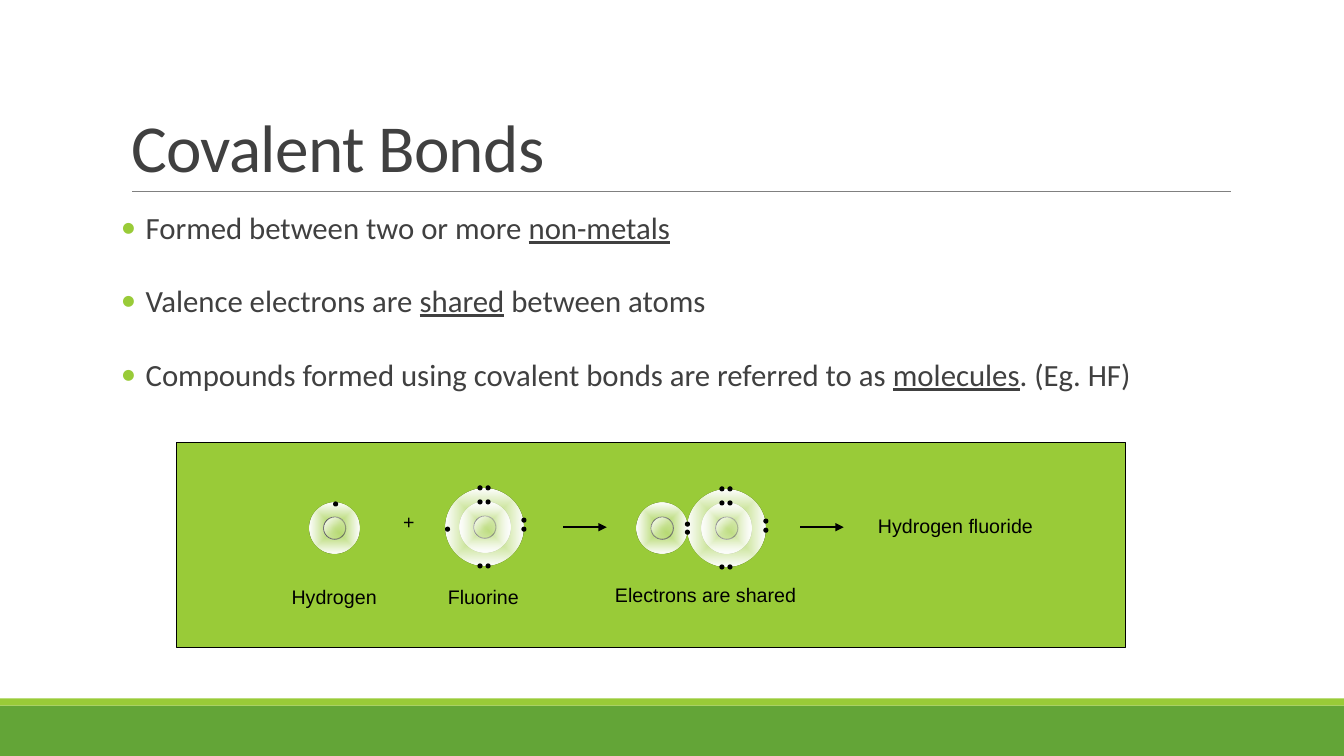
from pptx import Presentation
from pptx.dml.color import RGBColor as Rgb
from pptx.enum.shapes import MSO_CONNECTOR as Conn, MSO_SHAPE as Geo
from pptx.enum.text import MSO_ANCHOR as Anchor, MSO_AUTO_SIZE as Fit, PP_ALIGN as Align
from pptx.oxml import parse_xml
from pptx.oxml.ns import nsdecls, qn
from pptx.util import Inches, Pt

HUES = {"lime": "99CB38", "green": "63A537", "ink": "404040",
        "grey": "808080", "black": "000000", "white": "FFFFFF"}
COLS, ROWS = 133.33, 75  # grid of tenth-inch cells
BOND = [  # bullet parts; the middle part is underlined
    ("Formed between two or more ", "non-metals", ""),
    ("Valence electrons are ", "shared", " between atoms"),
    ("Compounds formed using covalent bonds are referred to as ",
     "molecules", ". (Eg. HF)"),
]
# Electron places, measured from the middle of an atom
PAIRS = [(x, y) for y in (-3.9, -2.5, 3.85) for x in (-0.48, 0.32)]
SIDE = [(3.88, -0.7), (3.88, 0.2)]
LONE = [(-3.7, 0.2)]


def cell(n):
    return Inches(n / 10)


def hue(name):
    return Rgb.from_string(HUES[name])


def style(item, form):
    for key, val in form.items():
        setattr(item, key, val)


def node(tag, body):
    return parse_xml(f"<a:{tag} {nsdecls('a')}{body}")


def place(item, box):
    style(item, dict(zip(("left", "top", "width", "height"), map(cell, box))))


def edge(line, name, size):
    line.color.rgb = hue(name)
    line.width = Pt(size)


# Preset shape with a plain or a shaded fill
def shape(home, geo, box, fill=None, line=None, shade=None):
    item = home.add_shape(geo, *map(cell, box))
    item.shadow.inherit = False
    if shade is not None:
        item.element.spPr.insert(2, shade)
    else:
        item.fill.solid()
        item.fill.fore_color.rgb = hue(fill)
    if line:
        edge(item.line, line, 0.75)
    else:
        item.line.fill.background()


def disc(home, x, y, size, **look):
    shape(home, Geo.OVAL, (x - size / 2, y - size / 2, size, size), **look)


def blend(stops, way):
    marks = "".join(
        f'<a:gs pos="{pos}"><a:srgbClr val="{HUES[name]}">'
        f'<a:alpha val="{alpha * 1000}"/></a:srgbClr></a:gs>'
        for pos, name, alpha in stops)
    return node("gradFill", f' rotWithShape="1"><a:gsLst>{marks}</a:gsLst>{way}</a:gradFill>')


def core_fill():
    return blend([(0, "white", 100), (100000, "lime", 6)],
                 '<a:lin ang="2700000" scaled="1"/>')


def shell_fill():
    return blend([(0, "white", 6), (100000, "white", 100)],
                 '<a:path path="shape"><a:fillToRect l="50000" t="50000" '
                 'r="50000" b="50000"/></a:path>')


# Atom: nucleus, shells, then its electrons
def atom(home, x, y, shells, dots):
    disc(home, x, y, 2.2, shade=core_fill(), line="black")
    for size in shells:
        disc(home, x, y, size, shade=shell_fill())
    disc(home, x, y, 2.1, shade=core_fill())
    for dx, dy in dots:
        disc(home, x + dx, y + dy, 0.4, fill="black", line="black")


def rule(home, x, y, end, name, size, head=False):
    item = home.add_connector(Conn.STRAIGHT, *map(cell, (x, y, end, y)))
    edge(item.line, name, size)
    props = item.element.spPr
    props.append(node("effectLst", "/>"))
    if head:
        props.find(qn("a:ln")).append(node("tailEnd", ' type="triangle"/>'))


def run(para, text, tone, **form):
    part = para.add_run()
    part.text = text
    style(part.font, form)
    part.font.color.rgb = hue(tone)
    return part


def label(home, box, text):
    frame = home.add_textbox(*map(cell, box)).text_frame
    frame.word_wrap = True
    para = frame.paragraphs[0]
    para.alignment = Align.CENTER
    run(para, text, "black", size=Pt(14), name="Arial")


def title(item):
    place(item, (12, 3.1, 110, 15.9))
    frame = item.text_frame
    style(frame, {"vertical_anchor": Anchor.BOTTOM, "auto_size": Fit.NONE})
    para = frame.paragraphs[0]
    style(para, {"alignment": Align.LEFT, "line_spacing": 0.85})
    part = run(para, "Covalent Bonds", "ink", size=Pt(48), name="Calibri")
    part._r.get_or_add_rPr().set("spc", "-50")


def bullets(item):
    place(item, (12, 20.2, 110, 44))
    frame = item.text_frame
    style(frame, {"margin_left": 0, "margin_right": 0, "auto_size": Fit.NONE})
    for i, parts in enumerate(BOND):
        para = frame.add_paragraph() if i else frame.paragraphs[0]
        style(para, {"space_before": Pt(0), "space_after": Pt(26), "line_spacing": 1.0})
        props = para._p.get_or_add_pPr()
        props.set("marL", str(int(cell(2.45))))
        props.set("indent", str(-int(cell(2.45))))
        props.append(node("buClr", f'><a:srgbClr val="{HUES["lime"]}"/></a:buClr>'))
        props.append(node("buFont", ' typeface="Calibri"/>'))
        props.append(node("buChar", ' char="•"/>'))
        for j, text in enumerate(parts):
            if text:
                run(para, text, "ink", size=Pt(22), name="Calibri", underline=j == 1)


# Reaction panel: hydrogen + fluorine → shared pair → hydrogen fluoride
def panel(home):
    shape(home, Geo.RECTANGLE, (17.5, 43.9, 94.2, 20.3), "lime", "black")
    atom(home, 33.2, 52.4, [5], [(0.1, -2.4)])
    atom(home, 48.1, 52.3, [5, 7.7], PAIRS + SIDE + LONE)
    atom(home, 72.1, 52.4, [5, 7.7], PAIRS + SIDE)
    atom(home, 65.7, 52.4, [5], [(2.5, -0.4), (2.5, 0.4)])
    for x in (55.9, 79.4):
        rule(home, x, 52.3, x + 4.3, "black", 1.5, head=True)
    for x, y, wide, text in [
        (24.4, 57.5, 17.5, "Hydrogen"), (39.2, 57.5, 17.5, "Fluorine"),
        (38.7, 50.1, 3.7, "+"), (58.9, 57.3, 22.2, "Electrons are shared"),
        (84, 50.5, 21.6, "Hydrogen fluoride"),
    ]:
        label(home, (x, y, wide, 4.1), text)


def main():
    deck = Presentation()
    style(deck, {"slide_width": cell(COLS), "slide_height": cell(ROWS)})
    slide = deck.slides.add_slide(deck.slide_layouts[1])
    # Footer bands and title rule
    shape(slide.shapes, Geo.RECTANGLE, (0, 70, COLS, 5), "green")
    shape(slide.shapes, Geo.RECTANGLE, (0, 69.3, COLS, 0.7), "lime")
    rule(slide.shapes, 13.1, 19, 122.1, "grey", 0.5)
    # Text and diagram
    title(slide.shapes.title)
    bullets(slide.placeholders[1])
    panel(slide.shapes.add_group_shape().shapes)
    deck.save("out.pptx")


if __name__ == "__main__":
    main()
